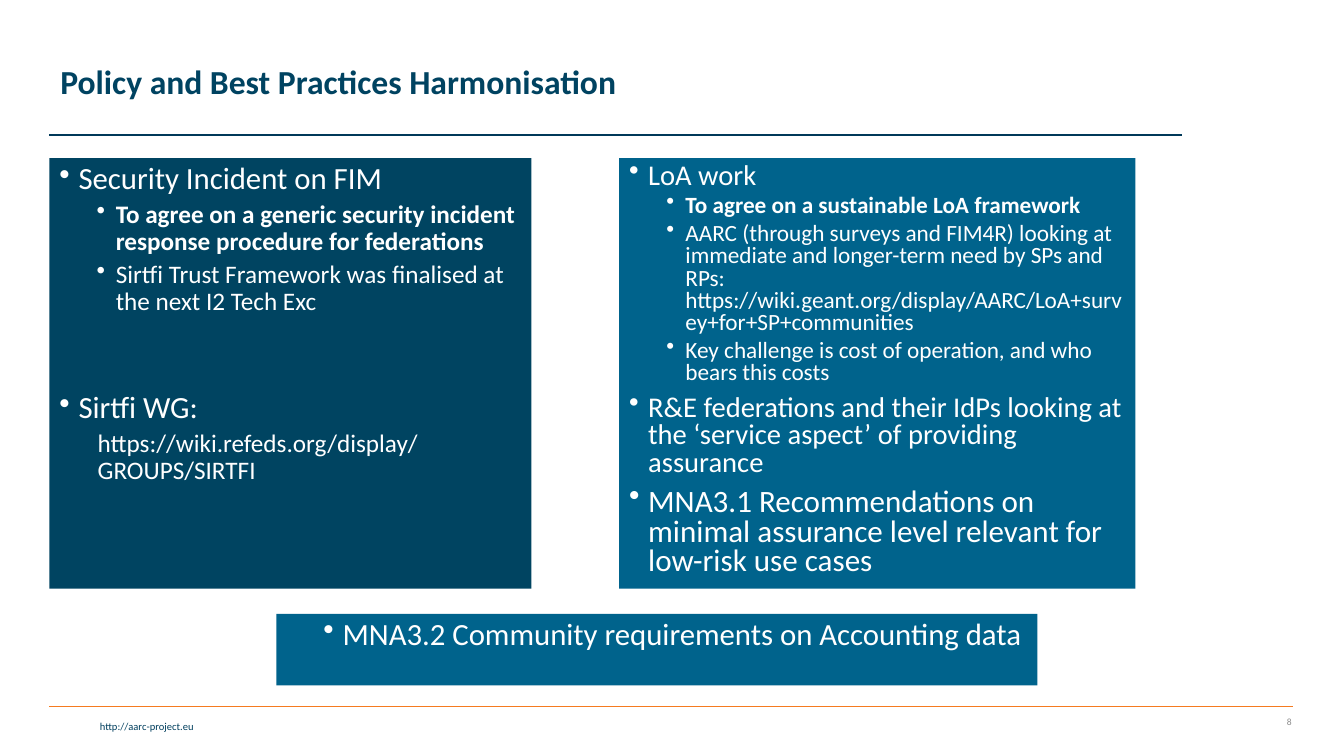
from pptx import Presentation
from pptx.dml.color import RGBColor
from pptx.enum.shapes import MSO_CONNECTOR, MSO_SHAPE
from pptx.enum.text import MSO_ANCHOR, PP_ALIGN
from pptx.oxml.ns import qn
from pptx.util import Inches, Pt
from lxml import etree

STRAIGHT = MSO_CONNECTOR.STRAIGHT
RECTANGLE = MSO_SHAPE.RECTANGLE
TOP, MIDDLE = MSO_ANCHOR.TOP, MSO_ANCHOR.MIDDLE
LEFT, RIGHT = PP_ALIGN.LEFT, PP_ALIGN.RIGHT

WHITE = RGBColor(0xFF, 0xFF, 0xFF)
NAVY = RGBColor(0x00, 0x44, 0x61)
BLUE = RGBColor(0x00, 0x63, 0x8C)
TITLE_NAVY = RGBColor(0x00, 0x43, 0x61)
RULE_NAVY = RGBColor(0x00, 0x39, 0x59)
FOOTER_NAVY = RGBColor(0x00, 0x3F, 0x5E)
ORANGE = RGBColor(0xF5, 0x7B, 0x20)
GREY = RGBColor(0x8C, 0x8C, 0x8C)

FONT = "Calibri"
HANGING = 0.19

# Formats of panel paragraphs: margin in inches, space before in points
POINT = {"margin": 0.19, "before": 7.5, "bullet": True}
DETAIL = {"margin": 0.56, "before": 3.8, "bullet": True}
KEY_DETAIL = {**DETAIL, "bold": True}
PLAIN_DETAIL = {"margin": 0.38, "before": 3.8, "bullet": False}
SEPARATE_POINT = {**POINT, "before": 54.6}

INCIDENT_TEXT = [
    ("Security Incident on FIM", 22, POINT),
    ("To agree on a generic security incident response procedure for federations",
     18, KEY_DETAIL),
    ("Sirtfi Trust Framework was finalised at the next I2 Tech Exc", 18, DETAIL),
    ("Sirtfi WG:", 22, SEPARATE_POINT),
    ("https://wiki.refeds.org/display/GROUPS/SIRTFI", 18, PLAIN_DETAIL),
]
ASSURANCE_TEXT = [
    ("LoA work", 20.4, POINT),
    ("To agree on a sustainable LoA framework", 16.6, KEY_DETAIL),
    ("AARC (through surveys and FIM4R) looking at immediate and longer-term "
     "need by SPs and RPs: "
     "https://wiki.geant.org/display/AARC/LoA+survey+for+SP+communities",
     16.6, DETAIL),
    ("Key challenge is cost of operation, and who bears this costs", 16.6, DETAIL),
    ("R&E federations and their IdPs looking at the ‘service aspect’ of "
     "providing assurance", 20.4, POINT),
    ("MNA3.1 Recommendations on minimal assurance level relevant for "
     "low-risk use cases", 22.2, POINT),
]
ACCOUNTING_TEXT = [
    ("MNA3.2 Community requirements on Accounting data", 22, DETAIL),
]


def add_span(para, text, size, color, bold=False):
    span = para.add_run()
    span.text = text
    formats = {"name": FONT, "size": Pt(size), "bold": bold}
    for name, value in formats.items():
        setattr(span.font, name, value)
    span.font.color.rgb = color


def add_rule(page, left, right, top, color):
    rule = page.shapes.add_connector(
        STRAIGHT, Inches(left), Inches(top), Inches(right), Inches(top))
    rule.line.color.rgb = color
    rule.line.width = Pt(1)
    etree.SubElement(rule._element.spPr, qn("a:effectLst"))


def add_label(page, area, text, size, color, align=LEFT, anchor=TOP, bold=False):
    box = page.shapes.add_textbox(*map(Inches, area))
    frame = box.text_frame
    frame.word_wrap = True
    frame.vertical_anchor = anchor
    para = frame.paragraphs[0]
    para.alignment = align
    add_span(para, text, size, color, bold)


def set_indent(para, margin, bullet):
    """Set the left margin, with a hanging bullet if wanted."""
    properties = para._p.get_or_add_pPr()
    properties.set("marL", str(Inches(margin)))
    properties.set("indent", str(Inches(-HANGING if bullet else 0)))
    if bullet:
        etree.SubElement(properties, qn("a:buChar"), char="•")
    else:
        etree.SubElement(properties, qn("a:buNone"))


def add_panel(page, area, fill, content, line_spacing):
    """Add a filled rectangle holding (text, size, format) paragraphs."""
    panel = page.shapes.add_shape(RECTANGLE, *map(Inches, area))
    panel.shadow.inherit = False
    panel.fill.solid()
    panel.fill.fore_color.rgb = fill
    panel.line.fill.background()
    frame = panel.text_frame
    frame.word_wrap = True
    frame.vertical_anchor = TOP
    for index, (text, size, style) in enumerate(content):
        para = frame.add_paragraph() if index else frame.paragraphs[0]
        set_indent(para, style["margin"], style["bullet"])
        formats = {
            "alignment": LEFT,
            "line_spacing": line_spacing,
            "space_before": Pt(style["before"] if index else 0),
        }
        for name, value in formats.items():
            setattr(para, name, value)
        add_span(para, text, size, WHITE, style.get("bold", False))


def main():
    deck = Presentation()
    deck.slide_width, deck.slide_height = Inches(13.33), Inches(7.5)
    page = deck.slides.add_slide(deck.slide_layouts[6])

    add_rule(page, 0.49, 12.82, 7.01, ORANGE)
    add_label(page, (0.03, 7.09, 1.99, 0.23), "http://aarc-project.eu",
              7.5, FOOTER_NAVY, align=RIGHT)
    add_rule(page, 0.49, 11.72, 1.34, RULE_NAVY)
    add_panel(page, (0.49, 1.57, 4.78, 4.27), NAVY, INCIDENT_TEXT, 0.9)
    add_label(page, (12.1, 7.01, 0.81, 0.3), "8", 6.8, GREY,
              align=RIGHT, anchor=MIDDLE)
    add_label(page, (0.5, 0.08, 10.51, 1.45),
              "Policy and Best Practices Harmonisation", 24, TITLE_NAVY,
              anchor=MIDDLE, bold=True)
    add_panel(page, (6.14, 1.57, 5.12, 4.27), BLUE, ASSURANCE_TEXT, 0.8)
    add_panel(page, (2.74, 6.09, 7.55, 0.71), BLUE, ACCOUNTING_TEXT, 0.9)

    deck.save("out.pptx")


if __name__ == "__main__":
    main()
